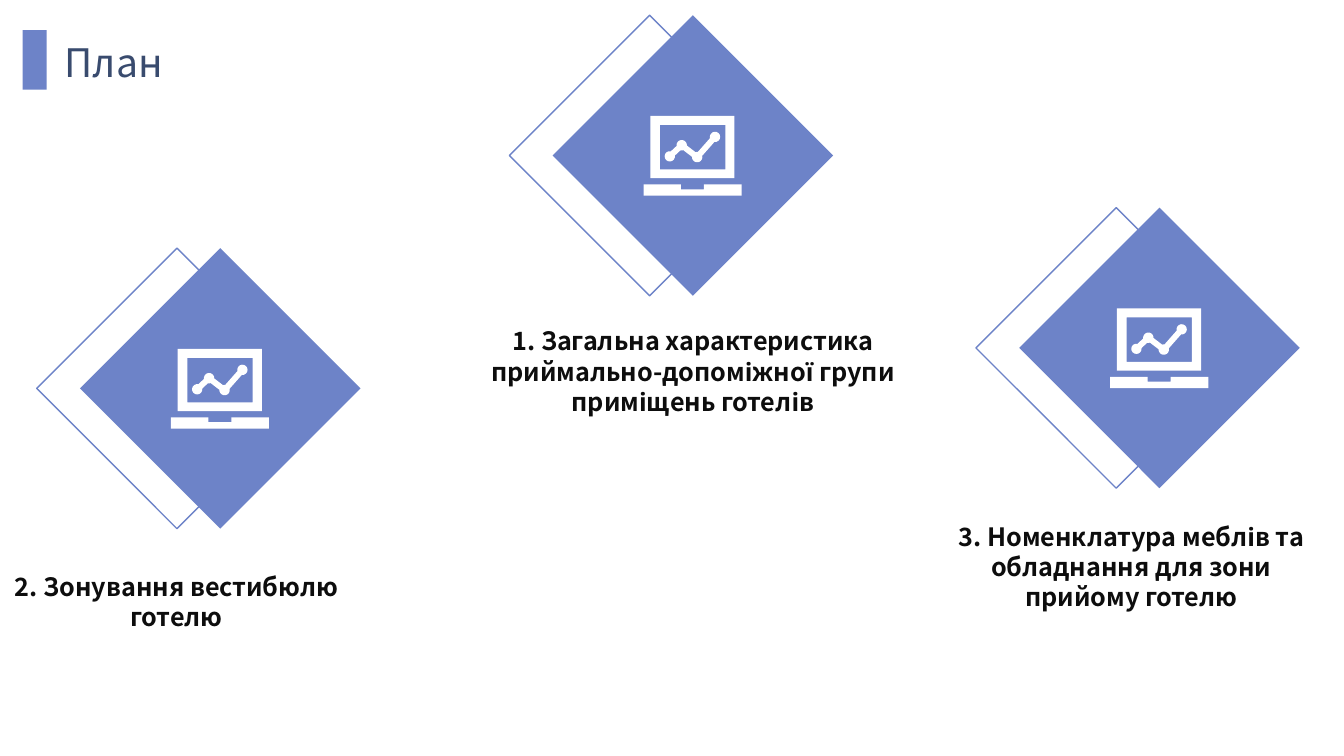
from math import atan2, cos, pi, sin

from pptx import Presentation
from pptx.dml.color import RGBColor
from pptx.enum.shapes import MSO_SHAPE
from pptx.enum.text import MSO_AUTO_SIZE, PP_ALIGN
from pptx.util import Cm, Pt

RECT = MSO_SHAPE.RECTANGLE
LEFT, CENTER = PP_ALIGN.LEFT, PP_ALIGN.CENTER
GROW = MSO_AUTO_SIZE.SHAPE_TO_FIT_TEXT

COLORS = {"blue": "6D83C8", "white": "FFFFFF", "navy": "394B6E", "ink": "0D0D0D"}
FONT = "Noto Sans CJK SC"
SIDE = 5.0    # side of a diamond before it is turned
SHIFT = 1.09  # how far the outline stands left of the solid diamond
UNITS = 1000  # freeform units in one centimetre

# Laptop icon, in cm from its own top left corner
BASE = [(0, 1.73), (0.94, 1.73), (0.94, 1.85), (1.52, 1.85),
        (1.52, 1.73), (2.47, 1.73), (2.47, 2.01), (0, 2.01)]
DOTS = [(0.66, 1.02), (0.96, 0.74), (1.35, 1.04), (1.8, 0.53)]


def color(name):
    return RGBColor.from_string(COLORS[name])


def box(left, top, right, bottom):
    return [(left, top), (right, top), (right, bottom), (left, bottom)]


def trend(dots, radius=0.13, half=0.6, steps=12):
    """Outline of round dots joined by bars; half is the bar's half angle."""
    walk = dots + dots[-2:0:-1]
    points = []
    for i, (x, y) in enumerate(walk):
        (px, py), (nx, ny) = walk[i - 1], walk[(i + 1) % len(walk)]
        start = atan2(py - y, px - x) + half
        end = atan2(ny - y, nx - x) - half
        sweep = (end - start) % (2 * pi)
        for k in range(steps + 1):
            angle = start + sweep * k / steps
            points.append((x + radius * cos(angle), y + radius * sin(angle)))
    return points


LAPTOP = [BASE, trend(DOTS), box(0.41, 0.23, 2.06, 1.35), box(0.17, 0, 2.29, 1.57)]


class Page:
    def __init__(self, slide):
        self.slide = slide
        self.host = slide.shapes

    def group(self):
        self.host = self.slide.shapes.add_group_shape().shapes

    def ungroup(self):
        self.host = self.slide.shapes

    def paint(self, shape, fill=None, line=None):
        shape.shadow.inherit = False
        if fill:
            shape.fill.solid()
            shape.fill.fore_color.rgb = color(fill)
        else:
            shape.fill.background()
        if line:
            shape.line.color.rgb = color(line)
            shape.line.width = Pt(1)
        else:
            shape.line.fill.background()

    def rect(self, left, top, width, height, turn=0, **look):
        shape = self.host.add_shape(RECT, Cm(left), Cm(top), Cm(width), Cm(height))
        shape.rotation = turn
        self.paint(shape, **look)

    def icon(self, left, top, parts):
        pen = None
        for part in parts:
            points = [(x * UNITS, y * UNITS) for x, y in part]
            if pen is None:
                pen = self.host.build_freeform(*points[0], scale=Cm(1) / UNITS)
            else:
                pen.move_to(*points[0])
            pen.add_line_segments(points[1:], close=True)
        self.paint(pen.convert_to_shape(Cm(left), Cm(top)), fill="white")

    def text(self, text, left, top, width, height, size=18, ink="ink",
             bold=False, align=LEFT, indent=0):
        frame = self.host.add_textbox(Cm(left), Cm(top), Cm(width), Cm(height)).text_frame
        frame.word_wrap = True
        frame.auto_size = GROW
        para = frame.paragraphs[0]
        para.alignment = align
        if indent:
            para.level = 1
            para._p.get_or_add_pPr().set("marL", str(Cm(indent)))
        run = para.add_run()
        run.text = text
        run.font.name = FONT
        run.font.size = Pt(size)
        run.font.bold = bold
        run.font.color.rgb = color(ink)

    def badge(self, left, top):
        self.group()
        self.rect(left - SHIFT, top, SIDE, SIDE, turn=45, line="blue")
        self.rect(left, top, SIDE, SIDE, turn=45, fill="blue")
        self.icon(left + 1.26, top + 1.5, LAPTOP)
        self.ungroup()


def main():
    deck = Presentation()
    deck.slide_width, deck.slide_height = Cm(33.87), Cm(19.05)
    page = Page(deck.slides.add_slide(deck.slide_layouts[6]))

    # Title
    page.group()
    page.rect(0.57, 0.76, 0.61, 1.5, fill="blue")
    page.text("План", 1.38, 0.84, 8.6, 1.45, size=28, ink="navy")
    page.ungroup()

    # Plan items: badge place, caption place, caption height, indent, caption
    items = [
        (14.96, 1.42, 12.04, 8.08, 2.57, 0,
         "1. Загальна характеристика приймально-допоміжної групи приміщень готелів"),
        (3.05, 7.29, -0.97, 14.27, 1.8, 0,
         "2. Зонування вестибюлю готелю"),
        (26.72, 6.27, 22.45, 13, 2.57, 1.27,
         "3. Номенклатура меблів та обладнання для зони прийому готелю"),
    ]
    for x, y, left, top, height, indent, words in items:
        page.badge(x, y)
        page.text(words, left, top, 10.85, height, bold=True, align=CENTER, indent=indent)

    deck.save("out.pptx")


if __name__ == "__main__":
    main()
